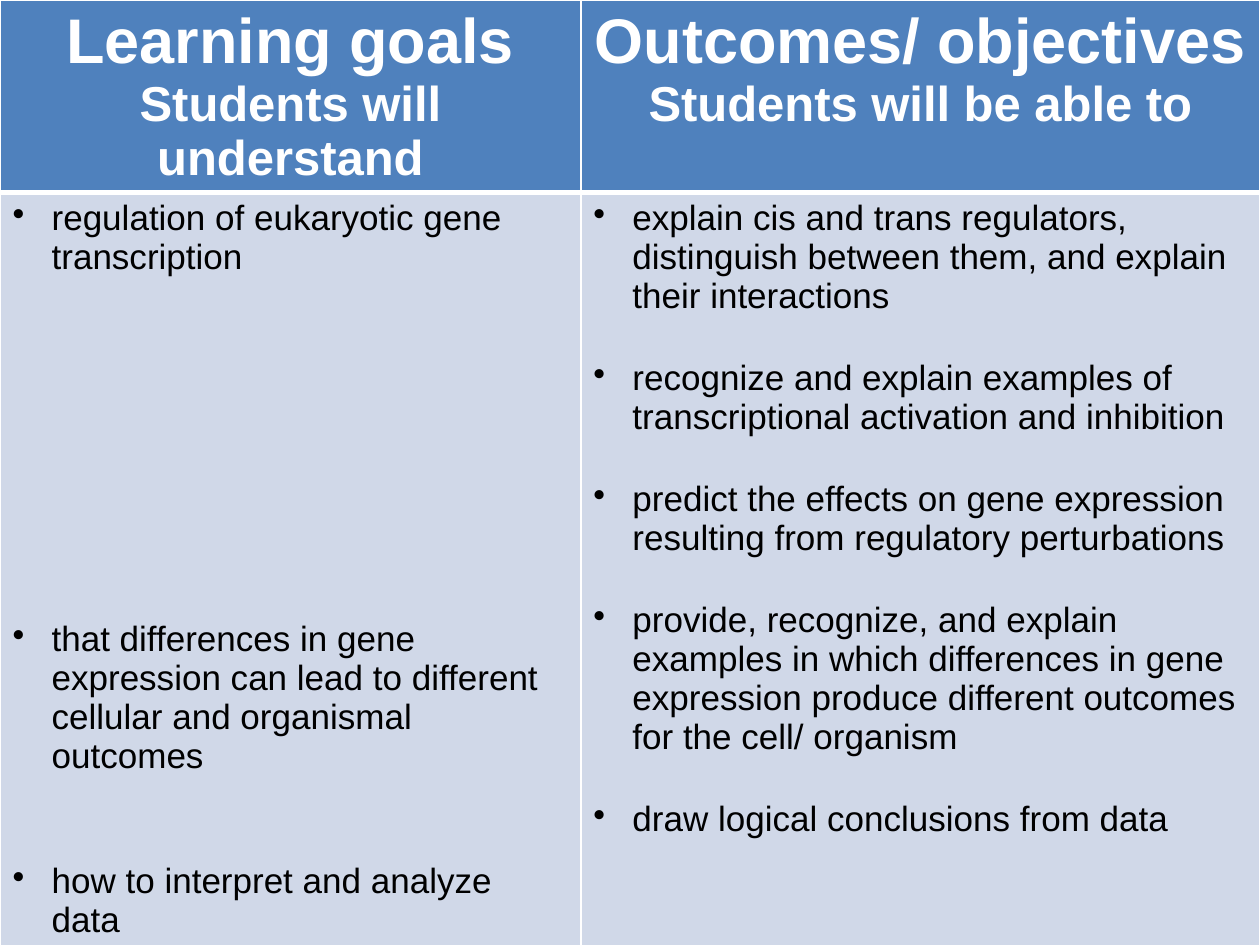
from lxml.etree import SubElement
from pptx import Presentation
from pptx.dml.color import RGBColor
from pptx.enum.text import PP_ALIGN as Align
from pptx.oxml.ns import qn
from pptx.util import Inches, Pt

COLORS = {"header": "4F81BD", "body": "D0D8E8", "border": "FFFFFF",
          "heading": "FFFFFF", "text": "000000"}
FONT = "Arial"
BLANK_LINE = 24.5
HANGING = Inches(0.31)
COLUMN_SHARES = (0.461, 0.539)
ROW_SHARES = (0.19, 0.866)

HEADINGS = [
    ("Learning goals", "Students will understand"),
    ("Outcomes/ objectives", "Students will be able to"),
]
GOALS = [
    (0, "regulation of eukaryotic gene transcription"),
    (8, "that differences in gene expression can lead to different cellular "
        "and organismal outcomes"),
    (2, "how to interpret and analyze data"),
]
OUTCOMES = [
    (0, "explain cis and trans regulators, distinguish between them, and "
        "explain their interactions"),
    (1, "recognize and explain examples of transcriptional activation and inhibition"),
    (1, "predict the effects on gene expression resulting from regulatory perturbations"),
    (1, "provide, recognize, and explain examples in which differences in gene "
        "expression produce different outcomes for the cell/ organism"),
    (1, "draw logical conclusions from data"),
]


def style_cell(cell, fill, top, bottom):
    """Give a cell its borders and fill."""
    properties = cell._tc.get_or_add_tcPr()
    for side, width in (("L", 1), ("R", 1), ("T", top), ("B", bottom)):
        line = SubElement(properties, qn(f"a:ln{side}"), w=str(Pt(width)))
        solid = SubElement(line, qn("a:solidFill"))
        SubElement(solid, qn("a:srgbClr"), val=COLORS["border"])
    cell.fill.solid()
    cell.fill.fore_color.rgb = RGBColor.from_string(COLORS[fill])


def add_line(frame, index, text, size, color, bold):
    """Write one formatted paragraph and return it."""
    paragraph = frame.add_paragraph() if index else frame.paragraphs[0]
    paragraph.text = text
    font = paragraph.font
    font.name, font.size, font.bold = FONT, Pt(size), bold
    font.color.rgb = RGBColor.from_string(COLORS[color])
    return paragraph


def fill_header(cell, heading):
    """Write a column title with its lead-in."""
    style_cell(cell, "header", 1, 3)
    for index, (text, size) in enumerate(zip(heading, (36, 28))):
        add_line(cell.text_frame, index, text, size, "heading", True).alignment = Align.CENTER


def fill_body(cell, points):
    """Write a bulleted list, spaced in blank lines."""
    style_cell(cell, "body", 3, 1)
    for index, (blank_lines, text) in enumerate(points):
        paragraph = add_line(cell.text_frame, index, text, 20, "text", False)
        if blank_lines:
            paragraph.space_before = Pt(blank_lines * BLANK_LINE)
        properties = paragraph._p.get_or_add_pPr()
        properties.set("marL", str(HANGING))
        properties.set("indent", str(-HANGING))
        bullet = properties.makeelement(qn("a:buChar"), {"char": "•"})
        properties.find(qn("a:defRPr")).addprevious(bullet)


def add_goals_table(slide, left, top, width, height):
    """Place the table of goals and outcomes in the given box."""
    table = slide.shapes.add_table(2, 2, left, top, width, height).table
    table.horz_banding = False
    for column, share in zip(table.columns, COLUMN_SHARES):
        column.width = int(width * share)
    for row, share in zip(table.rows, ROW_SHARES):
        row.height = int(height * share)
    for index, (heading, points) in enumerate(zip(HEADINGS, (GOALS, OUTCOMES))):
        fill_header(table.cell(0, index), heading)
        fill_body(table.cell(1, index), points)


def main():
    """Build and save the presentation."""
    deck = Presentation()
    deck.slide_width, deck.slide_height = Inches(10), Inches(7.5)
    slide = deck.slides.add_slide(deck.slide_layouts[6])
    add_goals_table(slide, 0, 0, deck.slide_width, deck.slide_height)
    deck.save("out.pptx")


if __name__ == "__main__":
    main()
